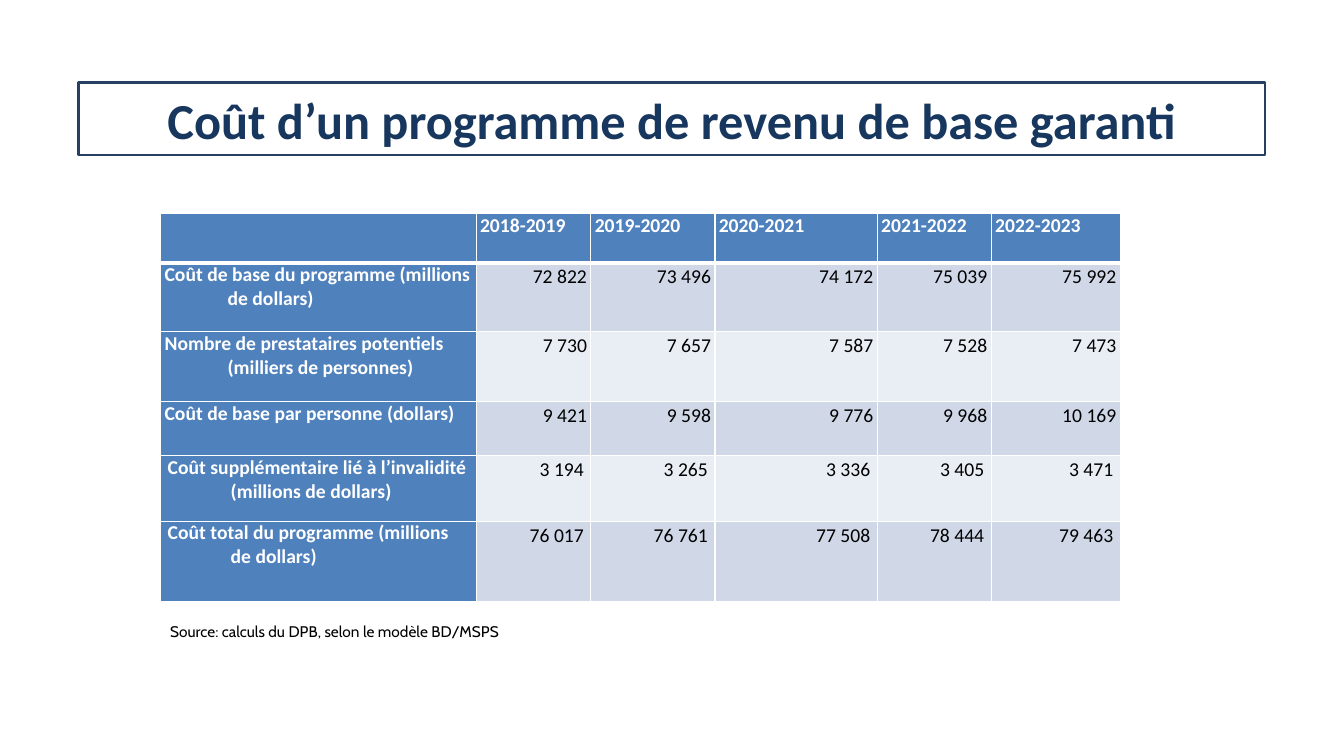
from lxml.etree import SubElement as Sub
from pptx import Presentation
from pptx.dml.color import RGBColor as RGB
from pptx.enum.shapes import MSO_SHAPE as SHAPE
from pptx.enum.text import MSO_ANCHOR as ANCHOR, MSO_AUTO_SIZE as FIT, PP_ALIGN as ALIGN
from pptx.oxml.ns import qn
from pptx.util import Pt

HUES = {
    "line": "254061", "title": "17375E", "head": "4F81BD",
    "odd": "D0D8E8", "even": "E9EDF4", "white": "FFFFFF", "black": "000000",
}
YEARS = ["2018-2019", "2019-2020", "2020-2021", "2021-2022", "2022-2023"]
COSTS = [
    ("Coût de base du programme (millions de dollars)", [72822, 73496, 74172, 75039, 75992]),
    ("Nombre de prestataires potentiels (milliers de personnes)", [7730, 7657, 7587, 7528, 7473]),
    ("Coût de base par personne (dollars)", [9421, 9598, 9776, 9968, 10169]),
    ("Coût supplémentaire lié à l’invalidité (millions de dollars)", [3194, 3265, 3336, 3405, 3471]),
    ("Coût total du programme (millions de dollars)", [76017, 76761, 77508, 78444, 79463]),
]
WIDTHS = [225.3, 82, 88.6, 116, 81.4, 92.2]
HEIGHTS = [35.3, 49.2, 49.8, 38.8, 46.8, 57.6]


def put(item, form):
    for key, val in form.items():
        setattr(item, key, val)


class Page:
    def __init__(self, deck):
        self.shapes = deck.slides.add_slide(deck.slide_layouts[6]).shapes
        self.font = {"name": "Calibri", "size": Pt(14), "bold": False}

    def text(self, frame, words, hue, align=ALIGN.LEFT, **form):
        para = frame.paragraphs[0]
        para.alignment = align
        run = para.add_run()
        run.text = words
        put(run.font, self.font | form)
        run.font.color.rgb = RGB.from_string(HUES[hue])
        return para

    def title(self, words, box):
        rect = self.shapes.add_shape(SHAPE.RECTANGLE, *map(Pt, box))
        rect.shadow.inherit = False
        rect.fill.background()
        rect.line.color.rgb = RGB.from_string(HUES["line"])
        rect.line.width = Pt(1.75)
        put(rect.text_frame, {"word_wrap": True, "vertical_anchor": ANCHOR.MIDDLE})
        self.text(rect.text_frame, words, "title", ALIGN.CENTER, size=Pt(36), bold=True)

    def note(self, words, box):
        frame = self.shapes.add_textbox(*map(Pt, box)).text_frame
        put(frame, {"word_wrap": False, "auto_size": FIT.SHAPE_TO_FIT_TEXT})
        self.text(frame, words, "black", name="Cabin", size=Pt(11))

    def edge(self, cell, row):
        props = cell._tc.get_or_add_tcPr()
        thick = {"lnB": row == 0, "lnT": row == 1}
        for spot, side in enumerate(("lnL", "lnR", "lnT", "lnB")):
            wide = Pt(3 if thick.get(side) else 1)
            line = props.makeelement(qn(f"a:{side}"), {"w": str(wide)})
            fill = Sub(line, qn("a:solidFill"))
            Sub(fill, qn("a:srgbClr"), val=HUES["white"])
            props.insert(spot, line)

    def cell(self, cell, words, row, col):
        side = Pt(5 if row > 3 else 2.8)
        put(cell, {"margin_left": side, "margin_right": side, "margin_top": 0, "margin_bottom": 0})
        head = row == 0 or col == 0
        hue = "head" if head else "odd" if row % 2 else "even"
        cell.fill.solid()
        cell.fill.fore_color.rgb = RGB.from_string(HUES[hue])
        self.edge(cell, row)
        if not words:
            return
        if head:
            para = self.text(cell.text_frame, words, "white", bold=True)
            props = para._p.get_or_add_pPr()
            props.set("marL", str(Pt(45)))
            props.set("indent", str(-Pt(45)))
        else:
            para = self.text(cell.text_frame, words, "black", ALIGN.RIGHT)
            para.line_spacing = 1.1

    def table(self, rows, left, top):
        box = (left, top, sum(WIDTHS), sum(HEIGHTS))
        grid = self.shapes.add_table(len(rows), len(WIDTHS), *map(Pt, box)).table
        for col, wide in zip(grid.columns, WIDTHS):
            col.width = Pt(wide)
        for row, tall in zip(grid.rows, HEIGHTS):
            row.height = Pt(tall)
        for r, row in enumerate(rows):
            for c, words in enumerate(row):
                self.cell(grid.cell(r, c), words, r, c)


def main():
    deck = Presentation()
    put(deck, {"slide_width": Pt(960), "slide_height": Pt(540)})
    page = Page(deck)
    page.title("Coût d’un programme de revenu de base garanti", (56.2, 59, 847.4, 51.8))
    rows = [["", *YEARS]]
    rows += [[name, *(f"{n:,}".replace(",", " ") for n in vals)] for name, vals in COSTS]
    page.table(rows, 114.8, 152.5)
    page.note("Source: calculs du DPB, selon le modèle BD/MSPS", (114.5, 440.6, 260, 20.9))
    deck.save("out.pptx")


if __name__ == "__main__":
    main()
